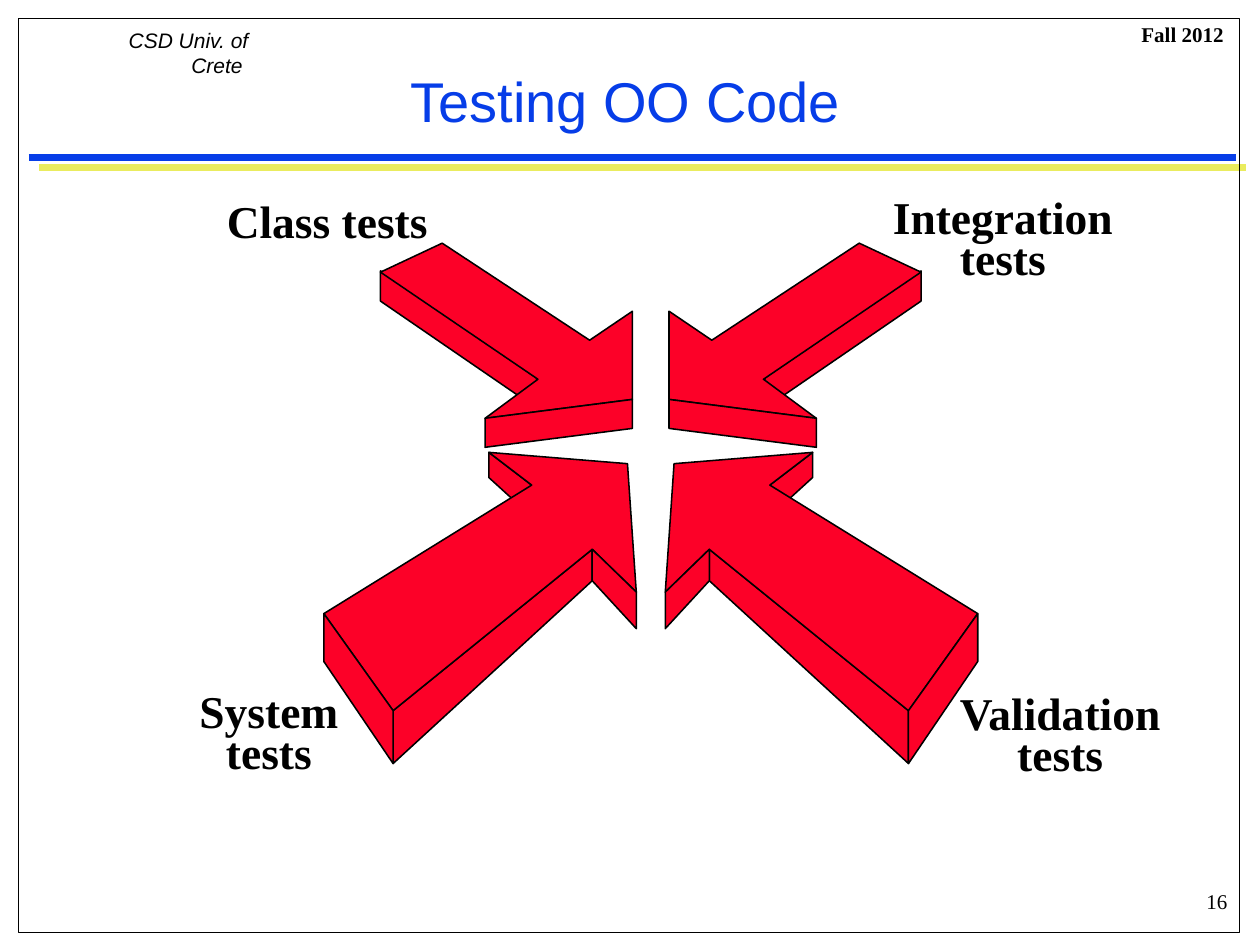
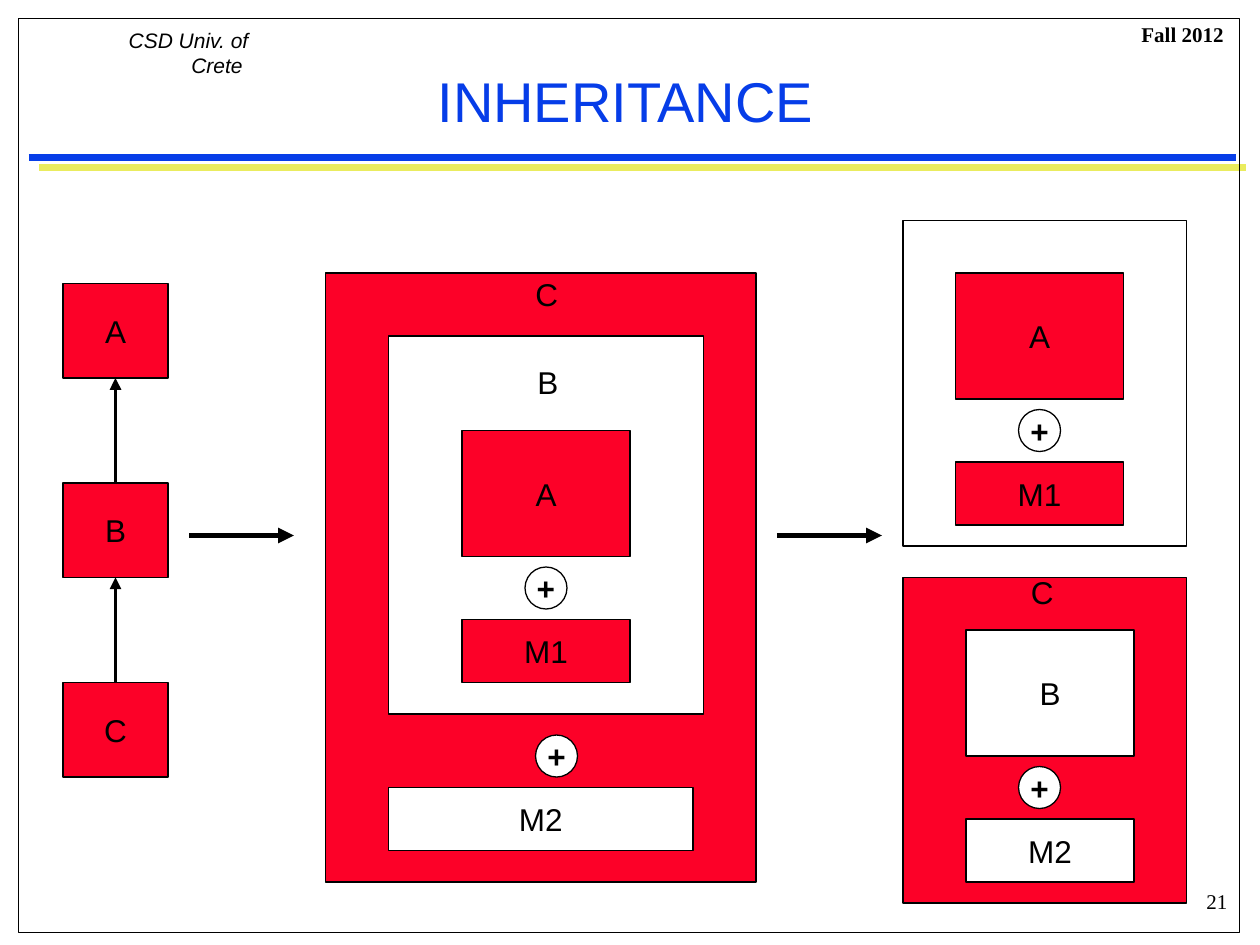
import pptx
import pptx.util
import pptx.dml.color
import pptx.enum.shapes
import pptx.enum.text
import pptx.oxml.ns
from lxml import etree

Inches, Pt = pptx.util.Inches, pptx.util.Pt
Shape = pptx.enum.shapes.MSO_SHAPE
Align = pptx.enum.text.PP_ALIGN
Middle = pptx.enum.text.MSO_ANCHOR.MIDDLE
qn = pptx.oxml.ns.qn

# Content and formats
INK = {"blue": "063DE8", "gold": "EAEC5E", "red": "FC0128",
       "black": "000000", "white": "FFFFFF"}
SERIF, SANS = "Times New Roman", "Arial"
FONT = {
    "title": {"name": SANS, "size": Pt(32), "bold": False},
    "place": {"name": SANS, "size": Pt(12), "italic": True},
    "term": {"name": SERIF, "size": Pt(12), "bold": True},
    "page": {"name": SERIF, "size": Pt(12)},
    "test": {"name": SERIF, "size": Pt(26), "bold": True},
    "box": {"name": SANS, "size": Pt(18)},
    "plus": {"name": SANS, "size": Pt(18), "bold": True},
}

# Header and footer texts: text, place, font
FRAME = [
    ("CSD Univ. of Crete ", (0.52, 0.17, 1.55, 0.3), "place"),
    ("Fall 2012", (7.77, 0.12, 2.04, 0.3), "term"),
]
PAGE = (9.31, 7, 0.53, 0.3)

# Test labels: lines, place
TESTS = [
    (["Class tests"], (1.69, 1.48, 1.83, 0.55)),
    (["Integration", "tests"], (6.97, 1.55, 1.98, 0.76)),
    (["Validation", "tests"], (7.5, 5.49, 1.83, 0.76)),
    (["System", "tests"], (1.47, 5.47, 1.33, 0.76)),
]

# Faces of the left arrows; the right ones mirror them
MIRROR = 10.33
UPPER = [
    [(3.02, 2.15), (4.26, 3), (4.26, 3.24), (3.02, 2.39)],
    [(3.02, 2.16), (3.51, 1.93), (4.68, 2.7), (5.02, 2.47),
     (5.02, 3.17), (3.85, 3.32), (4.27, 3.01)],
    [(3.85, 3.32), (5.02, 3.17), (5.02, 3.4), (3.85, 3.55)],
]
LOWER = [
    [(3.12, 5.64), (3.12, 6.06), (4.7, 4.61), (4.7, 4.36)],
    [(4.22, 3.85), (4.22, 4.1), (3.88, 3.79), (3.88, 3.59)],
    [(2.57, 4.87), (4.22, 3.85), (3.88, 3.59), (4.98, 3.68),
     (5.05, 4.7), (4.7, 4.36), (3.12, 5.64)],
    [(2.57, 4.87), (3.12, 5.64), (3.12, 6.06), (2.57, 5.25)],
    [(4.7, 4.36), (4.7, 4.61), (5.05, 4.99), (5.05, 4.7)],
]

# Class diagram, on a grid of twelfths of an inch
CHAIN = ["A", "B", "C"]
CHAIN_TOP, CHAIN_STEP = 27, 19
PANELS = [  # place, fill
    ((31, 26, 41, 58), "red"),
    ((37, 32, 30, 36), "white"),
    ((86, 21, 27, 31), "white"),
    ((86, 55, 27, 31), "red"),
]
STACKS = [  # upper text, lower text, left, top, plus offset, fill
    ("A", "M1", 44, 41, 6, "red"),
    ("A", "M1", 91, 26, 6, "red"),
    ("B", "M2", 92, 60, 5, "white"),
]
LABELS = [
    ("B", (50, 34, 5, 6)),
    ("C", (49.8, 25.6, 5, 6)),
    ("C", (97, 54, 6, 6)),
]
STEPS = [(18, 28), (74, 84)]


def color(name):
    return pptx.dml.color.RGBColor.from_string(INK[name])


def inch(vals):
    return [Inches(v) for v in vals]


def grid(vals):
    return [Inches(v / 12) for v in vals]


def write(frame, lines, font, align, ink="black", space=None):
    for i, line in enumerate(lines):
        para = frame.paragraphs[0] if i == 0 else frame.add_paragraph()
        para.alignment, para.line_spacing = align, space
        run = para.add_run()
        run.text = line
        for key, val in FONT[font].items():
            setattr(run.font, key, val)
        run.font.color.rgb = color(ink)


def label(slide, lines, place, font, align, wrap=False, pad=0.1, space=None):
    frame = slide.shapes.add_textbox(*place).text_frame
    look = {"word_wrap": wrap, "margin_left": Inches(pad), "margin_right": Inches(pad),
            "auto_size": pptx.enum.text.MSO_AUTO_SIZE.SHAPE_TO_FIT_TEXT}
    for key, val in look.items():
        setattr(frame, key, val)
    write(frame, lines, font, align, space=space)


def paint(shape, fill, width):
    shape.shadow.inherit = False
    if fill:
        shape.fill.solid()
        shape.fill.fore_color.rgb = color(fill)
    else:
        shape.fill.background()
    shape.line.color.rgb = color("black")
    shape.line.width = Pt(width)


def rule(slide, ends, ink, width, head=False):
    kind = pptx.enum.shapes.MSO_CONNECTOR.STRAIGHT
    line = slide.shapes.add_connector(kind, *ends)
    line.line.color.rgb = color(ink)
    line.line.width = Pt(width)
    props = line.element.spPr
    if head:
        etree.SubElement(props.find(qn("a:ln")), qn("a:tailEnd"), type="triangle")
    etree.SubElement(props, qn("a:effectLst"))


def box(slide, place, fill, text="", kind=Shape.RECTANGLE, font="box"):
    shape = slide.shapes.add_shape(kind, *grid(place))
    paint(shape, fill, 0.75)
    if text:
        frame = shape.text_frame
        frame.word_wrap, frame.vertical_anchor = False, Middle
        write(frame, [text], font, Align.CENTER)


def plus(slide, left, top):
    box(slide, (left, top, 4, 4), "white", "+", Shape.OVAL, "plus")


def start(deck, title, page):
    slide = deck.slides.add_slide(deck.slide_layouts[5])
    # Double rule under the title
    for ink, gap in (("gold", 0.08), ("blue", 0)):
        rule(slide, inch((0.23 + gap, 1.25 + gap, 9.81 + gap, 1.25 + gap)), ink, 4)
    # Border, header and page number
    edge = slide.shapes.add_shape(Shape.RECTANGLE, *inch((0.15, 0.15, 9.69, 7.25)))
    paint(edge, None, 0.5)
    for text, place, font in FRAME + [(str(page), PAGE, "page")]:
        label(slide, [text], inch(place), font, Align.RIGHT, wrap=True)
    # Title
    head = slide.shapes.title
    head.left, head.top, head.width, head.height = inch((0.31, 0.42, 9.31, 0.75))
    head.text_frame.vertical_anchor = Middle
    write(head.text_frame, [title], "title", Align.CENTER, "blue")
    return slide


def arrow(slide, faces, flip):
    group = slide.shapes.add_group_shape()
    for face in faces:
        dots = [inch((MIRROR - x if flip else x, y)) for x, y in face]
        pen = group.shapes.build_freeform(*dots[0])
        pen.add_line_segments(dots[1:], close=True)
        paint(pen.convert_to_shape(), "red", 0.88)


def tests(deck):
    slide = start(deck, "Testing OO Code", 16)
    for faces in (UPPER, LOWER):
        for flip in (False, True):
            arrow(slide, faces, flip)
    for lines, place in TESTS:
        many = len(lines) > 1
        label(slide, lines, inch(place), "test", Align.CENTER if many else Align.LEFT,
              pad=0.11, space=0.75 if many else None)


def classes(deck):
    slide = start(deck, "INHERITANCE", 21)
    # Chain of classes, each pointing to its parent
    for i, name in enumerate(CHAIN):
        top = CHAIN_TOP + i * CHAIN_STEP
        box(slide, (6, top, 10, 9), "red", name)
        if i:
            rule(slide, grid((11, top, 11, top - CHAIN_STEP + 9)), "black", 2.25, True)
    # Nested and split panels
    for place, fill in PANELS:
        box(slide, place, fill)
    box(slide, (37, 75, 29, 6), "white", "M2")
    plus(slide, 51, 70)
    for upper, lower, left, top, shift, fill in STACKS:
        box(slide, (left, top, 16, 12), fill, upper)
        box(slide, (left, top + 18, 16, 6), fill, lower)
        plus(slide, left + shift, top + 13)
    for text, place in LABELS:
        label(slide, [text], grid(place), "box", Align.LEFT)
    # Arrows between the stages
    for left, right in STEPS:
        rule(slide, grid((left, 51, right, 51)), "black", 3, True)


def main():
    deck = pptx.Presentation()
    deck.slide_width, deck.slide_height = Inches(10), Inches(7.5)
    tests(deck)
    classes(deck)
    deck.save("out.pptx")


if __name__ == "__main__":
    main()
